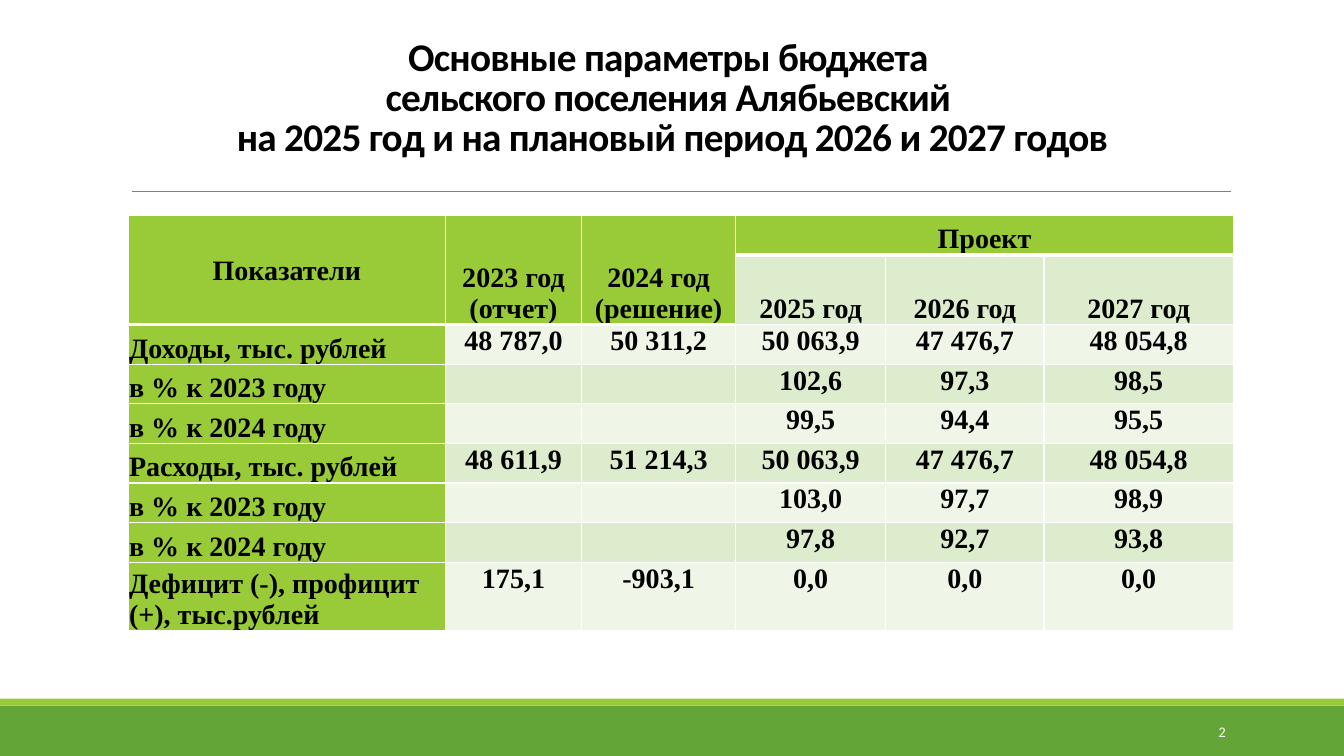
from lxml.etree import SubElement
from pptx import Presentation
from pptx.dml.color import RGBColor
from pptx.enum.shapes import MSO_CONNECTOR as Connector, MSO_SHAPE as Shape
from pptx.enum.text import MSO_ANCHOR as Anchor, PP_ALIGN as Align
from pptx.oxml.ns import qn
from pptx.util import Inches, Pt

TITLE = [
    "Основные параметры бюджета ",
    "сельского поселения Алябьевский ",
    "на 2025 год и на плановый период 2026 и 2027 годов",
]
ROWS = [
    ["Показатели", "2023 год (отчет)", "2024 год (решение)", "Проект", "", ""],
    ["", "", "", "2025 год", "2026 год", "2027 год"],
    ["Доходы, тыс. рублей", "48 787,0", "50 311,2", "50 063,9", "47 476,7", "48 054,8"],
    ["в % к 2023 году", "", "", "102,6", "97,3", "98,5"],
    ["в % к 2024 году", "", "", "99,5", "94,4", "95,5"],
    ["Расходы, тыс. рублей", "48 611,9", "51 214,3", "50 063,9", "47 476,7", "48 054,8"],
    ["в % к 2023 году", "", "", "103,0", "97,7", "98,9"],
    ["в % к 2024 году", "", "", "97,8", "92,7", "93,8"],
    ["Дефицит (-), профицит (+), тыс.рублей", "175,1", "-903,1", "0,0", "0,0", "0,0"],
]
# Shares of the slide's width and height, in percent
COLUMN_WIDTHS = [23.62, 10.12, 11.47, 11.17, 11.77, 14.1]
ROW_HEIGHTS = [5.2, 9.2] + [5.24] * 6 + [8.67]
MERGES = [(0, 0, 1, 0), (0, 1, 1, 1), (0, 2, 1, 2), (0, 3, 0, 5)]
THICK_EDGES = {(1, 0), (1, 1), (1, 2), (0, 3), (0, 4), (0, 5)}


def color(value):
    return RGBColor.from_string(value)


class SlideBuilder:
    """Draws on one slide; all places and sizes are percent of the slide."""

    green, lime = "63A537", "99CB38"
    bands = ("EFF6E8", "DEECCE")
    black, white, gray = "000000", "FFFFFF", "808080"
    body_font, table_font = "Calibri", "Times New Roman"

    def __init__(self, presentation):
        self.width = presentation.slide_width
        self.height = presentation.slide_height
        self.slide = presentation.slides.add_slide(presentation.slide_layouts[6])

    def x(self, percent):
        return round(self.width * percent / 100)

    def y(self, percent):
        return round(self.height * percent / 100)

    def box(self, left, top, width, height):
        return self.x(left), self.y(top), self.x(width), self.y(height)

    def run(self, paragraph, text, size, font, hue, bold=False):
        run = paragraph.add_run()
        run.text = text
        run.font.size, run.font.name, run.font.bold = Pt(size), font, bold
        run.font.color.rgb = color(hue)
        return run

    def bar(self, top, height, hue):
        shape = self.slide.shapes.add_shape(Shape.RECTANGLE, *self.box(0, top, 100, height))
        shape.shadow.inherit = False
        shape.fill.solid()
        shape.fill.fore_color.rgb = color(hue)
        shape.line.fill.background()

    def rule(self, left, right, top):
        line = self.slide.shapes.add_connector(
            Connector.STRAIGHT, self.x(left), self.y(top), self.x(right), self.y(top))
        line.line.color.rgb = color(self.gray)
        line.line.width = Pt(0.5)
        SubElement(line._element.spPr, qn("a:effectLst"))

    def text_box(self, place, anchor, align):
        frame = self.slide.shapes.add_textbox(*self.box(*place)).text_frame
        frame.word_wrap = True
        frame.vertical_anchor = anchor
        frame.paragraphs[0].alignment = align
        return frame

    def title(self, lines, *place):
        frame = self.text_box(place, Anchor.BOTTOM, Align.CENTER)
        frame.margin_bottom = Inches(0.45)
        paragraph = frame.paragraphs[0]
        paragraph.line_spacing = 0.85
        for index, line in enumerate(lines):
            if index:
                paragraph.add_line_break()
            run = self.run(paragraph, line, 28, self.body_font, self.black, True)
            run.font._element.set("spc", "-50")

    def page_number(self, number, *place):
        frame = self.text_box(place, Anchor.MIDDLE, Align.RIGHT)
        self.run(frame.paragraphs[0], number, 10.5, self.body_font, self.white)

    def borders(self, cell, top, bottom):
        properties = cell._tc.get_or_add_tcPr()
        for side, width in (("L", 1), ("R", 1), ("T", top), ("B", bottom)):
            line = SubElement(properties, qn(f"a:ln{side}"), w=str(Pt(width)))
            fill = SubElement(line, qn("a:solidFill"))
            SubElement(fill, qn("a:srgbClr"), val=self.white)

    def cell(self, cell, text, row, column):
        is_header = row == 0 or (row == 1 and column < 3)
        is_label = column == 0 and row > 1
        top = 3 if (row - 1, column) in THICK_EDGES else 1
        bottom = 3 if is_header else 1
        self.borders(cell, top, bottom)
        cell.fill.solid()
        cell.fill.fore_color.rgb = color(
            self.lime if is_header or is_label else self.bands[row % 2])
        cell.margin_left = cell.margin_right = cell.margin_top = Inches(0.01)
        cell.margin_bottom = 0
        if row == column == 0:
            cell.vertical_anchor = Anchor.MIDDLE
        else:
            cell.vertical_anchor = Anchor.BOTTOM if row < 2 or is_label else Anchor.TOP
        paragraph = cell.text_frame.paragraphs[0]
        paragraph.alignment = Align.LEFT if is_label else Align.CENTER
        if text:
            self.run(paragraph, text, 20, self.table_font, self.black, True)

    def table(self, rows, left, top):
        place = self.box(left, top, sum(COLUMN_WIDTHS), sum(ROW_HEIGHTS))
        table = self.slide.shapes.add_table(len(rows), len(rows[0]), *place).table
        table.first_row = table.horz_banding = False
        for column, width in zip(table.columns, COLUMN_WIDTHS):
            column.width = self.x(width)
        for row, height in zip(table.rows, ROW_HEIGHTS):
            row.height = self.y(height)
        for first_row, first_column, last_row, last_column in MERGES:
            table.cell(first_row, first_column).merge(table.cell(last_row, last_column))
        for row, texts in enumerate(rows):
            for column, text in enumerate(texts):
                self.cell(table.cell(row, column), text, row, column)


def main():
    presentation = Presentation()
    presentation.slide_width, presentation.slide_height = Inches(13.33), Inches(7.5)
    builder = SlideBuilder(presentation)
    builder.bar(93.33, 6.67, builder.green)
    builder.bar(92.4, 0.93, builder.lime)
    builder.rule(9.83, 91.58, 25.3)
    builder.title(TITLE, 6.67, 12.93, 86.7, 14.13)
    builder.table(ROWS, 9.53, 28.53)
    builder.page_number("2", 81.23, 94.13, 10.72, 5.33)
    presentation.save("out.pptx")


if __name__ == "__main__":
    main()
